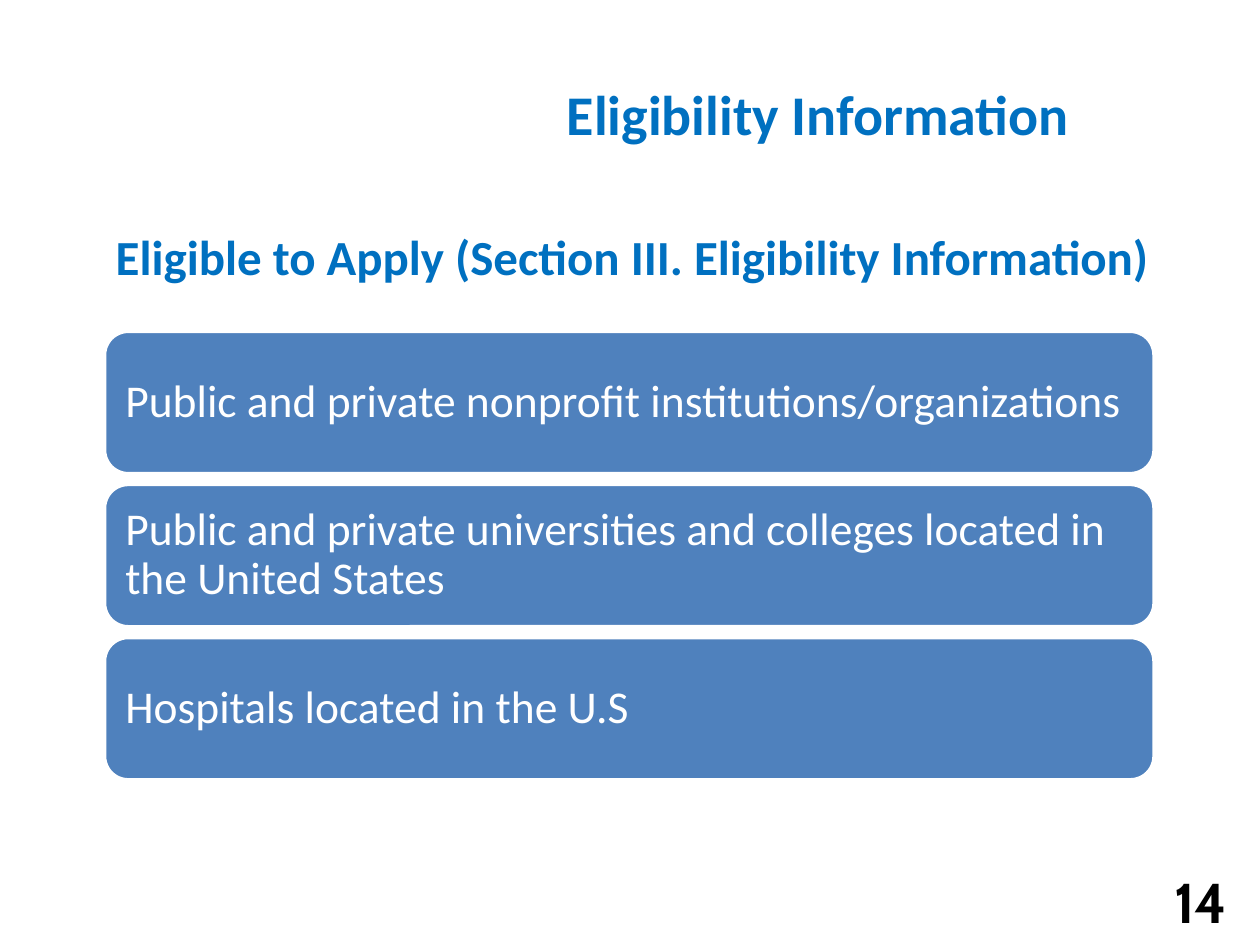
from pptx import Presentation
from pptx.dml.color import RGBColor
from pptx.enum.shapes import MSO_SHAPE
from pptx.enum.text import MSO_ANCHOR, PP_ALIGN
from pptx.util import Inches, Pt

ROUND = MSO_SHAPE.ROUNDED_RECTANGLE
TOP, MIDDLE = MSO_ANCHOR.TOP, MSO_ANCHOR.MIDDLE
LEFT, CENTER, RIGHT = PP_ALIGN.LEFT, PP_ALIGN.CENTER, PP_ALIGN.RIGHT

THEME = {
    "head": RGBColor(0x00, 0x70, 0xC0),
    "card": RGBColor(0x4F, 0x81, 0xBD),
    "white": RGBColor(0xFF, 0xFF, 0xFF),
    "black": RGBColor(0x00, 0x00, 0x00),
    "font": "Calibri",
    "number font": "Cabin",
    "title size": Pt(32),
    "lead size": Pt(28),
    "card size": Pt(26),
}


def write(shape, text, size, color, align=LEFT, anchor=TOP, bold=True, font=THEME["font"]):
    frame = shape.text_frame
    frame.word_wrap = True
    frame.vertical_anchor = anchor
    line = frame.paragraphs[0]
    line.alignment = align
    run = line.add_run()
    run.text = text
    run.font.name = font
    run.font.size = size
    run.font.bold = bold
    run.font.color.rgb = color
    return frame


deck = Presentation()
deck.slide_width, deck.slide_height = Inches(10), Inches(7.5)
slide = deck.slides.add_slide(deck.slide_layouts[5])
shapes = slide.shapes

# Title
title = shapes.title
title.left, title.top = Inches(3.33), Inches(0.58)
title.width, title.height = Inches(6.33), Inches(0.75)
write(title, "Eligibility Information", THEME["title size"], THEME["head"], CENTER)

# Lead line
lead = shapes.add_textbox(Inches(0.82), Inches(1.75), Inches(8.83), Inches(0.57))
write(lead, "Eligible to Apply (Section III. Eligibility Information)",
      THEME["lead size"], THEME["head"])

# Stacked cards of eligible groups
groups = [
    "Public and private nonprofit institutions/organizations",
    "Public and private universities and colleges located in the United States",
    "Hospitals located in the U.S",
]
first, step = 2.63, 1.215
for i, group in enumerate(groups):
    card = shapes.add_shape(ROUND, Inches(0.83), Inches(first + i * step),
                            Inches(8.33), Inches(1.13))
    card.shadow.inherit = False
    card.fill.solid()
    card.fill.fore_color.rgb = THEME["card"]
    card.line.color.rgb = THEME["white"]
    card.line.width = Pt(2)
    frame = write(card, group, THEME["card size"], THEME["white"], anchor=MIDDLE, bold=False)
    frame.margin_left = frame.margin_right = Inches(0.11)
    frame.paragraphs[0].line_spacing = 0.9

# Slide number
number = shapes.add_textbox(Inches(7.17), Inches(6.95), Inches(2.67), Inches(0.4))
write(number, "14", THEME["title size"], THEME["black"], RIGHT, MIDDLE,
      font=THEME["number font"])

deck.save("out.pptx")
